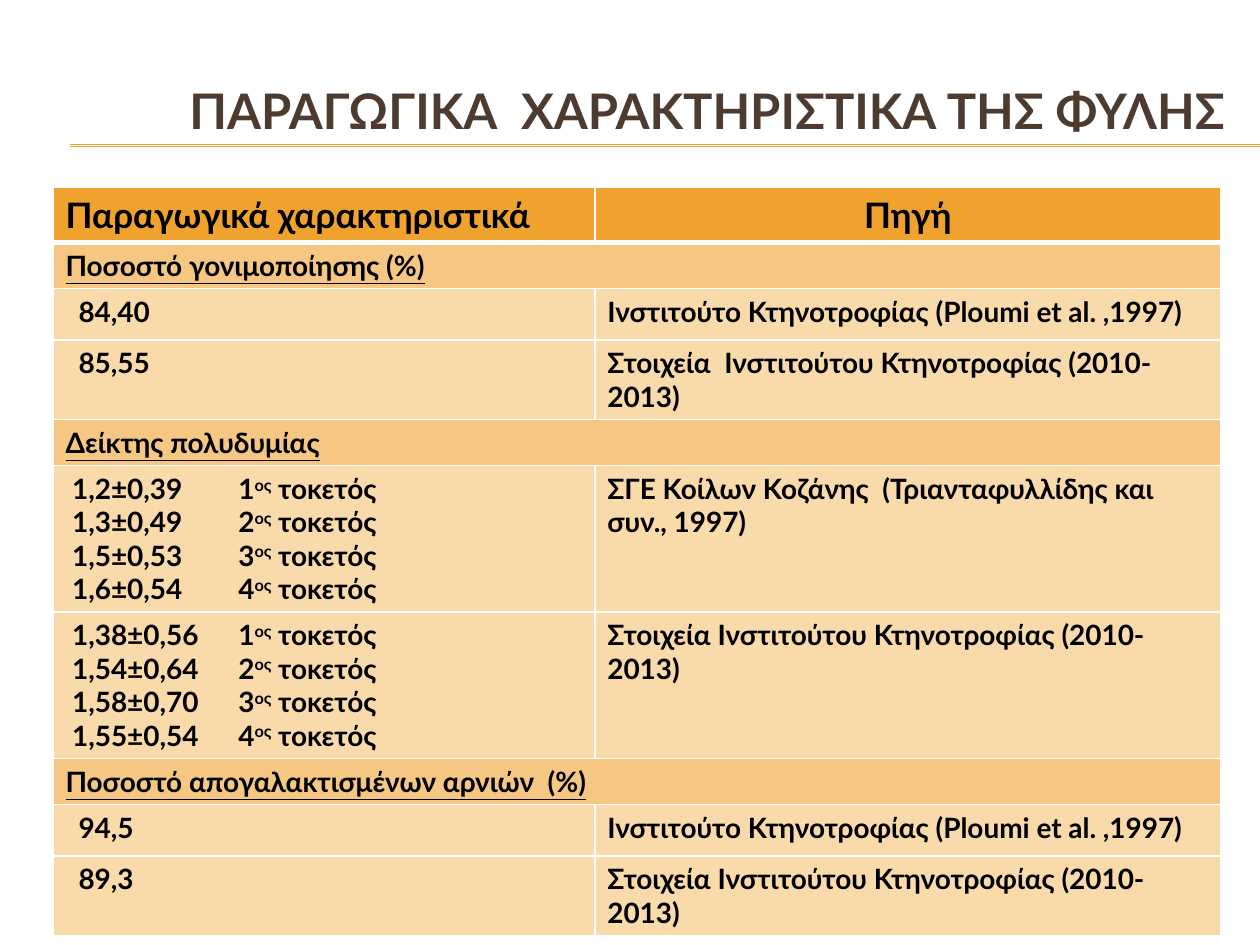
from lxml import etree
from pptx import Presentation
from pptx import util as u
from pptx.dml.color import RGBColor
from pptx.enum import shapes, text
from pptx.oxml import ns

FONT = "Lato"
BROWN, BLACK, WHITE = "4E3B30", "000000", "FFFFFF"
ORANGE, SECTION_FILL, ROW_FILL = "F0A22E", "F6C782", "F9DAAB"

TITLE = "ΠΑΡΑΓΩΓΙΚΑ  ΧΑΡΑΚΤΗΡΙΣΤΙΚΑ ΤΗΣ ΦΥΛΗΣ"
HEADINGS = ("Παραγωγικά χαρακτηριστικά", "Πηγή")
INSTITUTE = "Ινστιτούτο Κτηνοτροφίας (Ploumi et al. ,1997)"
RECORDS = "Στοιχεία Ινστιτούτου Κτηνοτροφίας (2010-2013)"
SECTIONS = [
    ("Ποσοστό γονιμοποίησης (%)", 0.76, [
        (["84,40"], INSTITUTE),
        (["85,55"], "Στοιχεία  Ινστιτούτου Κτηνοτροφίας (2010-2013)"),
    ]),
    ("Δείκτης πολυδυμίας", 0.74, [
        (["1,2±0,39", "1,3±0,49", "1,5±0,53", "1,6±0,54"],
         "ΣΓΕ Κοίλων Κοζάνης  (Τριανταφυλλίδης και συν., 1997)"),
        (["1,38±0,56", "1,54±0,64", "1,58±0,70", "1,55±0,54"], RECORDS),
    ]),
    ("Ποσοστό απογαλακτισμένων αρνιών  (%)", 0.84, [
        (["94,5"], INSTITUTE),
        (["89,3"], RECORDS),
    ]),
]
COLUMN_WIDTHS = (10.92, 12.62)
ROW_HEIGHT = 1.04
BIRTH_TAB = 3.35


def color(hex_code):
    return RGBColor.from_string(hex_code)


def set_font(paragraph, size, hex_code=BLACK, underline=None):
    font = paragraph.font
    font.name, font.size, font.bold = FONT, u.Pt(size), True
    font.underline = underline
    font.color.rgb = color(hex_code)


def style_cell(cell, fill, bottom=1):
    properties = cell._tc.get_or_add_tcPr()
    for side, width in (("L", 1), ("R", 1), ("T", 1), ("B", bottom)):
        border = etree.SubElement(properties, ns.qn(f"a:ln{side}"), w=str(u.Pt(width)))
        solid = etree.SubElement(border, ns.qn("a:solidFill"))
        etree.SubElement(solid, ns.qn("a:srgbClr"), val=WHITE)
    cell.fill.solid()
    cell.fill.fore_color.rgb = color(fill)


def fill_values(cell, values):
    births = len(values) > 1
    frame = cell.text_frame
    for number, value in enumerate(values, 1):
        paragraph = frame.paragraphs[0] if number == 1 else frame.add_paragraph()
        set_font(paragraph, 16)
        properties = paragraph._p.get_or_add_pPr()
        properties.set("marL", str(u.Cm(0.13 if births else 0.26)))
        if not births:
            paragraph.text = value
            continue
        tabs = etree.Element(ns.qn("a:tabLst"))
        etree.SubElement(tabs, ns.qn("a:tab"), pos=str(u.Cm(BIRTH_TAB)), algn="l")
        properties.insert(0, tabs)
        paragraph.add_run().text = f"{value}\t{number}"
        ordinal = paragraph.add_run()
        ordinal.text = "ος"
        ordinal.font._element.set("baseline", "30000")
        paragraph.add_run().text = " τοκετός"


def add_rule(slide, top):
    rule = slide.shapes.add_connector(
        shapes.MSO_CONNECTOR.STRAIGHT, u.Cm(1.42), u.Cm(top), u.Cm(25.4), u.Cm(top))
    rule.line.color.rgb = color(ORANGE)
    rule.line.width = u.Pt(0.75)
    etree.SubElement(rule._element.spPr, ns.qn("a:effectLst"))


def add_title(slide):
    title = slide.shapes.title
    title.left, title.top, title.width, title.height = map(u.Cm, (2.67, 1.04, 24.13, 2.34))
    frame = title.text_frame
    frame.text = TITLE
    frame.word_wrap = True
    frame.margin_left = u.Cm(1.15)
    frame.vertical_anchor = text.MSO_ANCHOR.MIDDLE
    frame.paragraphs[0].alignment = text.PP_ALIGN.LEFT
    set_font(frame.paragraphs[0], 28, BROWN)


def add_traits(slide):
    heights = [ROW_HEIGHT]
    for _, section_height, entries in SECTIONS:
        heights += [section_height] + [ROW_HEIGHT] * len(entries)
    traits = slide.shapes.add_table(
        len(heights), len(COLUMN_WIDTHS), u.Cm(1.07), u.Cm(3.78),
        u.Cm(sum(COLUMN_WIDTHS)), u.Cm(sum(heights))).table
    for column, width in zip(traits.columns, COLUMN_WIDTHS):
        column.width = u.Cm(width)
    for row, height in zip(traits.rows, heights):
        row.height = u.Cm(height)

    for column, heading in enumerate(HEADINGS):
        cell = traits.cell(0, column)
        cell.text = heading
        style_cell(cell, ORANGE, bottom=3)
        set_font(cell.text_frame.paragraphs[0], 20)
    traits.cell(0, 1).text_frame.paragraphs[0].alignment = text.PP_ALIGN.CENTER

    row = 1
    for section, _, entries in SECTIONS:
        heading, spanned = traits.cell(row, 0), traits.cell(row, 1)
        heading.merge(spanned)
        heading.text = section
        set_font(heading.text_frame.paragraphs[0], 16, underline=True)
        for cell in (heading, spanned):
            style_cell(cell, SECTION_FILL)
        for row, (values, origin) in enumerate(entries, row + 1):
            value_cell, origin_cell = traits.cell(row, 0), traits.cell(row, 1)
            fill_values(value_cell, values)
            origin_cell.text = origin
            set_font(origin_cell.text_frame.paragraphs[0], 16)
            for cell in (value_cell, origin_cell):
                style_cell(cell, ROW_FILL)
        row += 1


def main():
    deck = Presentation()
    deck.slide_width, deck.slide_height = u.Cm(25.4), u.Cm(19.05)
    slide = deck.slides.add_slide(deck.slide_layouts[5])
    for top in (2.92, 2.95):
        add_rule(slide, top)
    add_title(slide)
    add_traits(slide)
    deck.save("out.pptx")


if __name__ == "__main__":
    main()
